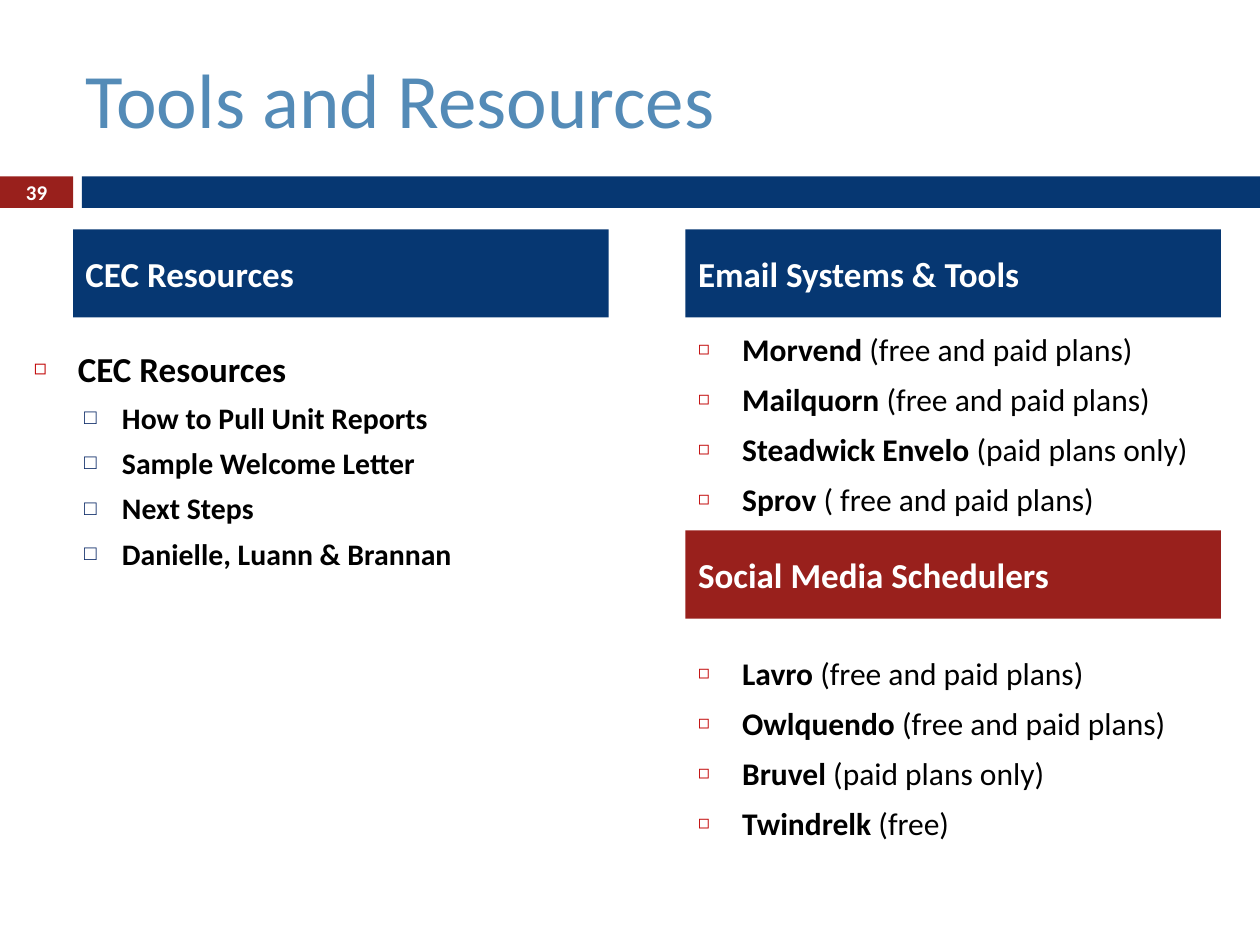
"""Build the Tools and Resources slide with three headed lists."""
from lxml.etree import SubElement
from pptx import Presentation
from pptx.dml.color import RGBColor
from pptx.enum.shapes import MSO_SHAPE
from pptx.enum.text import MSO_ANCHOR, MSO_AUTO_SIZE, PP_ALIGN
from pptx.oxml.ns import qn
from pptx.util import Inches, Pt

NAVY = RGBColor(0x06, 0x37, 0x72)
RED = RGBColor(0x99, 0x20, 0x1C)
SKY = RGBColor(0x54, 0x8B, 0xB7)
WHITE = RGBColor(0xFF, 0xFF, 0xFF)
BLACK = RGBColor(0x00, 0x00, 0x00)
BULLET_RED = RGBColor(0xC0, 0x00, 0x00)
BULLET_NAVY = RGBColor(0x00, 0x20, 0x60)
FONT = "Calibri"


def place(shape, left, top, width, height, anchor=MSO_ANCHOR.TOP):
    shape.left, shape.top = Inches(left), Inches(top)
    shape.width, shape.height = Inches(width), Inches(height)
    frame = shape.text_frame
    frame.word_wrap = True
    frame.auto_size = MSO_AUTO_SIZE.NONE
    frame.vertical_anchor = anchor
    return frame


def add_item(frame, index, texts, size, symbol, color, percent, margin, hanging, space):
    item = frame.paragraphs[0] if index == 0 else frame.add_paragraph()
    properties = item._p.get_or_add_pPr()
    properties.set("marL", str(Inches(margin)))
    properties.set("indent", str(-Inches(hanging)))
    bullet_color = SubElement(properties, qn("a:buClr"))
    SubElement(bullet_color, qn("a:srgbClr"), val=str(color))
    SubElement(properties, qn("a:buSzPct"), val=str(percent * 1000))
    SubElement(properties, qn("a:buFont"), typeface="Arial")
    SubElement(properties, qn("a:buChar"), char=symbol)
    item.space_before = Pt(space if index else 0)
    item.font.name, item.font.size = FONT, Pt(size)
    item.font.color.rgb = BLACK
    for position, text in enumerate(texts):
        run = item.add_run()
        run.text = text
        run.font.bold = position == 0
    return item


presentation = Presentation()
presentation.slide_width, presentation.slide_height = Inches(10), Inches(7.5)
slide = presentation.slides.add_slide(presentation.slide_layouts.get_by_name("Comparison"))
slots = {slot.placeholder_format.idx: slot for slot in slide.placeholders}

for left, width, color, number in [(0, 0.58, RED, "39"), (0.65, 9.35, NAVY, "")]:
    band = slide.shapes.add_shape(
        MSO_SHAPE.RECTANGLE, Inches(left), Inches(1.4), Inches(width), Inches(0.25))
    band.shadow.inherit = False
    band.fill.solid()
    band.fill.fore_color.rgb = color
    band.line.fill.background()
    if number:
        page = band.text_frame.paragraphs[0]
        page.text = number
        page.alignment = PP_ALIGN.CENTER
        page.font.name, page.font.size, page.font.bold = FONT, Pt(12), True
        page.font.color.rgb = WHITE

title_frame = place(slots[0], 0.58, 0.3, 8.92, 0.95, MSO_ANCHOR.MIDDLE)
title = title_frame.paragraphs[0]
title.text = "Tools and Resources"
title.alignment = PP_ALIGN.LEFT
title.font.name, title.font.size = FONT, Pt(44)
title.font.color.rgb = SKY

cec_heading = slide.shapes.add_textbox(0, 0, 0, 0)
headings = [
    (cec_heading, 0.58, 1.82, NAVY, "CEC Resources"),
    (slots[1], 5.44, 1.82, NAVY, "Email Systems & Tools"),
    (slots[3], 5.44, 4.21, RED, "Social Media Schedulers"),
]
for shape, left, top, color, text in headings:
    heading = place(shape, left, top, 4.25, 0.7, MSO_ANCHOR.MIDDLE).paragraphs[0]
    shape.fill.solid()
    shape.fill.fore_color.rgb = color
    heading.text = text
    heading.space_before = Pt(0)
    heading.font.name, heading.font.size, heading.font.bold = FONT, Pt(20), True
    heading.font.color.rgb = WHITE

email_tools = [
    ("Morvend", " (free and paid plans)"),
    ("Mailquorn", " (free and paid plans)"),
    ("Steadwick Envelo", " (paid plans only)"),
    ("Sprov ", "( free and paid plans)"),
]
schedulers = [
    ("Lavro", " (free and paid plans)"),
    ("Owlquendo", " (free and paid plans)"),
    ("Bruvel", " (paid plans only)"),
    ("Twindrelk", " (free)"),
]
for slot, top, tools in [(slots[2], 2.57, email_tools), (slots[4], 5.14, schedulers)]:
    tool_list = place(slot, 5.44, top, 4.25, 1.85)
    for index, tool in enumerate(tools):
        add_item(tool_list, index, tool, 18, "◻", BULLET_RED, 60, 0.35, 0.35, 7)

cec_list = place(slide.shapes.add_textbox(0, 0, 0, 0), 0.17, 2.71, 4.86, 1.85)
add_item(cec_list, 0, ["CEC Resources"], 20, "◻", BULLET_RED, 60, 0.35, 0.35, 7)
resources = ["How to Pull Unit Reports", "Sample Welcome Letter", "Next Steps",
             "Danielle, Luann & Brannan"]
for index, resource in enumerate(resources, 1):
    item = add_item(cec_list, index, [resource], 17, "□", BULLET_NAVY, 70, 0.7, 0.3, 5.5)
    item.level = 1

presentation.save("out.pptx")
